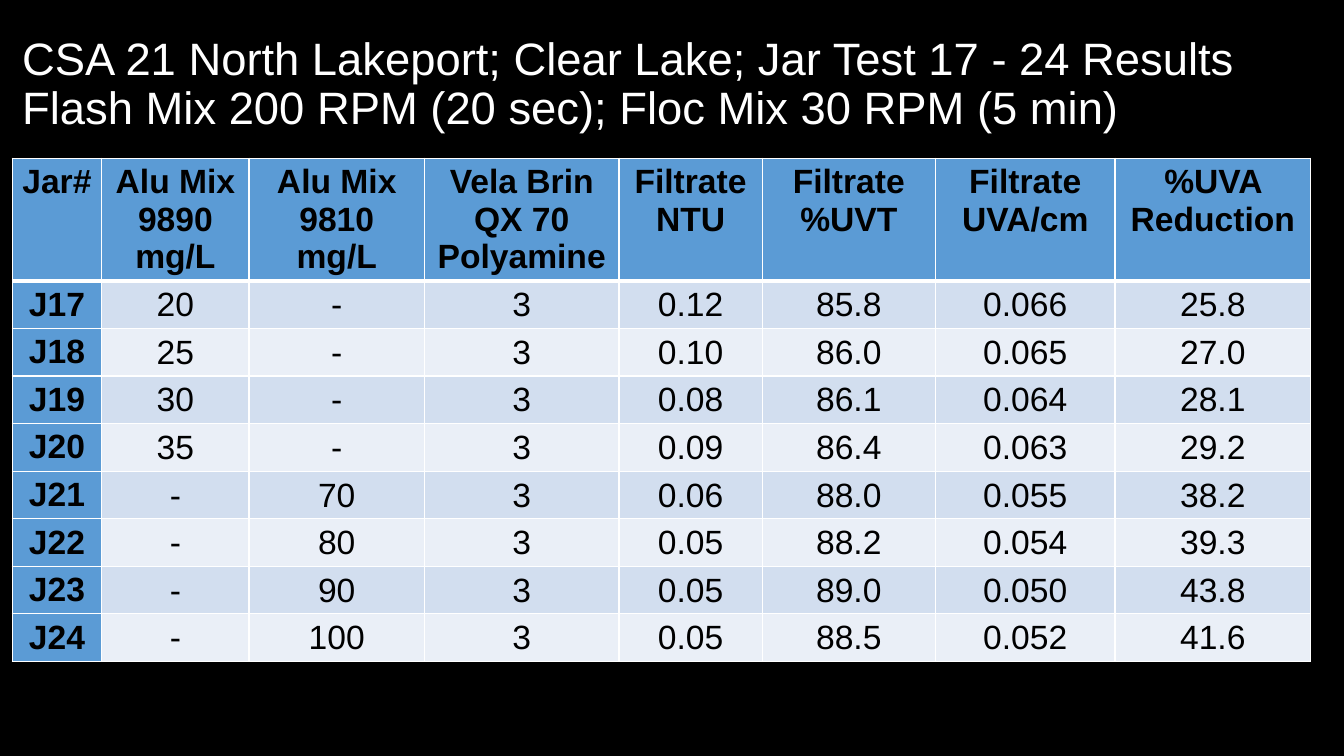
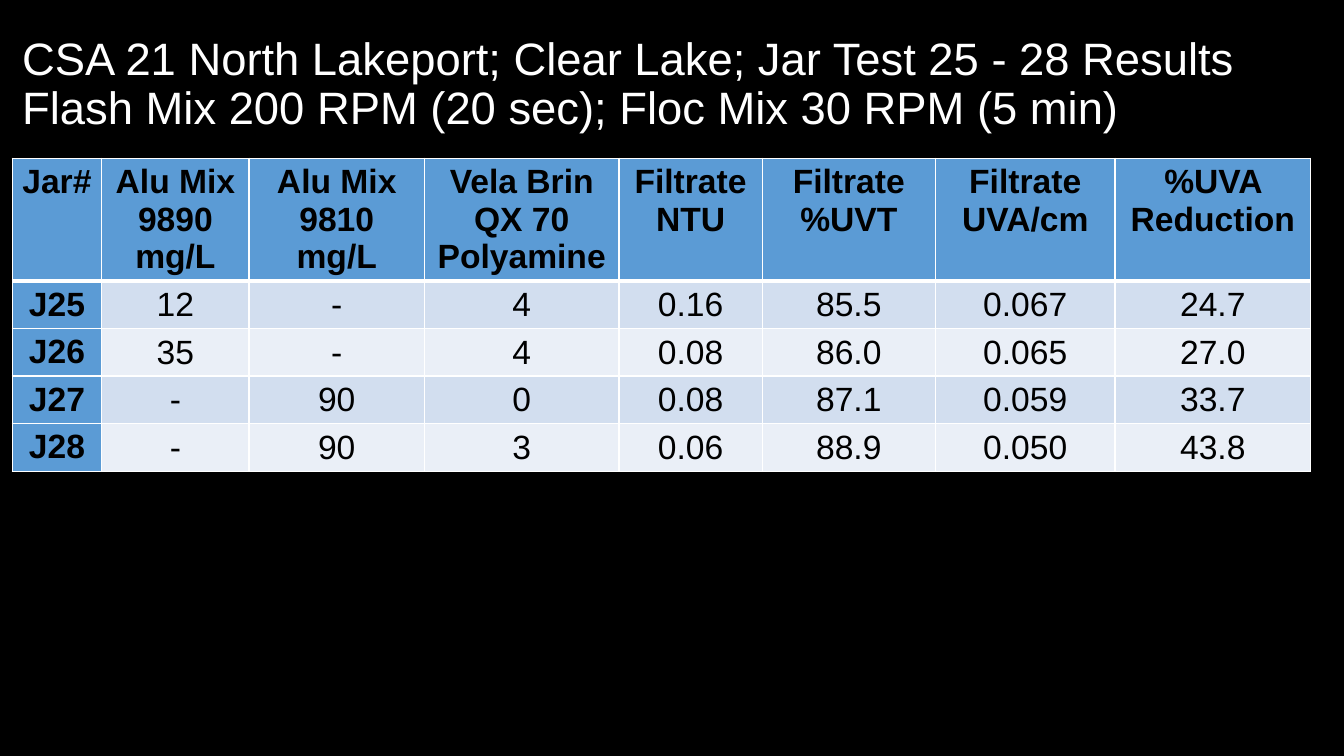
"""Jar test result slides: a two-line title above a banded results table."""
from dataclasses import dataclass
from typing import NamedTuple

from lxml.etree import SubElement
from pptx import Presentation
from pptx.dml.color import RGBColor
from pptx.enum.text import MSO_ANCHOR, MSO_AUTO_SIZE, PP_ALIGN
from pptx.oxml.ns import qn
from pptx.util import Inches, Pt


@dataclass(frozen=True)
class Theme:
    """Colours, type sizes, line widths and measures shared by the slides."""
    back: str = "000000"
    title: str = "FFFFFF"
    text: str = "000000"
    head: str = "5B9BD5"
    bands: tuple[str, str] = ("D2DEEF", "EAEFF7")
    rule: str = "FFFFFF"
    font: str = "Arial"
    title_pt: float = 32.4
    cell_pt: float = 24
    thin_pt: float = 1
    thick_pt: float = 3
    slide_w: float = 13.33
    slide_h: float = 7.5
    left: float = 0.12
    title_top: float = 0.13
    title_w: float = 13.03
    table_top: float = 1.57
    head_h: float = 1.21
    row_h: float = 0.47
    inset: float = 0.01


class Column(NamedTuple):
    """A table column: its width and the paragraphs of its heading."""
    width: float
    heading: tuple[str, ...]


class Jar(NamedTuple):
    """Doses and measured results of one jar."""
    number: int
    dose_9890: str
    dose_9810: str
    polyamine: str
    ntu: str
    uvt: str
    uva: str
    reduction: str


T = Theme()
COLUMNS = (
    Column(0.89, ("Jar#",)),
    Column(1.46, ("Alu Mix", "9890", "mg/L")),
    Column(1.74, ("Alu Mix", "9810", "mg/L")),
    Column(1.93, ("Vela Brin QX 70", "Polyamine")),
    Column(1.42, ("Filtrate", "NTU")),
    Column(1.72, ("Filtrate", "%UVT")),
    Column(1.78, ("Filtrate", "UVA/cm")),
    Column(1.94, ("%UVA Reduction",)),
)
JAR_TESTS = (
    (
        Jar(17, "20", "-", "3", "0.12", "85.8", "0.066", "25.8"),
        Jar(18, "25", "-", "3", "0.10", "86.0", "0.065", "27.0"),
        Jar(19, "30", "-", "3", "0.08", "86.1", "0.064", "28.1"),
        Jar(20, "35", "-", "3", "0.09", "86.4", "0.063", "29.2"),
        Jar(21, "-", "70", "3", "0.06", "88.0", "0.055", "38.2"),
        Jar(22, "-", "80", "3", "0.05", "88.2", "0.054", "39.3"),
        Jar(23, "-", "90", "3", "0.05", "89.0", "0.050", "43.8"),
        Jar(24, "-", "100", "3", "0.05", "88.5", "0.052", "41.6"),
    ),
    (
        Jar(25, "12", "-", "4", "0.16", "85.5", "0.067", "24.7"),
        Jar(26, "35", "-", "4", "0.08", "86.0", "0.065", "27.0"),
        Jar(27, "-", "90", "0", "0.08", "87.1", "0.059", "33.7"),
        Jar(28, "-", "90", "3", "0.06", "88.9", "0.050", "43.8"),
    ),
)


def add_run(p, text: str, size: float, color: str, bold: bool = False) -> None:
    """Add one formatted run to a paragraph."""
    r = p.add_run()
    r.text = text
    r.font.name = T.font
    r.font.size = Pt(size)
    r.font.bold = bold
    r.font.color.rgb = RGBColor.from_string(color)


def add_title(s, jars: tuple[Jar, ...]) -> None:
    """Place and fill the title of a slide."""
    sp = s.shapes.title
    sp.left, sp.top = Inches(T.left), Inches(T.title_top)
    sp.width, sp.height = Inches(T.title_w), Inches(T.table_top - T.title_top)
    tf = sp.text_frame
    tf.word_wrap = True
    tf.auto_size = MSO_AUTO_SIZE.NONE
    tf.vertical_anchor = MSO_ANCHOR.MIDDLE
    p = tf.paragraphs[0]
    p.alignment = PP_ALIGN.LEFT
    p.line_spacing = 0.9
    span = f"{jars[0].number} - {jars[-1].number}"
    add_run(p, f"CSA 21 North Lakeport; Clear Lake; Jar Test {span} Results",
            T.title_pt, T.title)
    p.add_line_break()
    add_run(p, "Flash Mix 200 RPM (20 sec); Floc Mix 30 RPM (5 min)",
            T.title_pt, T.title)


def set_borders(cell, top: float, bottom: float) -> None:
    """Rule the four sides of a cell, with given top and bottom widths."""
    tcPr = cell._tc.get_or_add_tcPr()
    sides = {"L": T.thin_pt, "R": T.thin_pt, "T": top, "B": bottom}
    for side, width in sides.items():
        ln = SubElement(tcPr, qn(f"a:ln{side}"), w=str(Pt(width)))
        fill = SubElement(ln, qn("a:solidFill"))
        SubElement(fill, qn("a:srgbClr"), val=T.rule)


def fill_cell(cell, lines: tuple[str, ...], row: int, col: int) -> None:
    """Write and style one cell according to its place in the table."""
    is_label = row == 0 or col == 0
    set_borders(cell, T.thick_pt if row == 1 else T.thin_pt,
                T.thick_pt if row == 0 else T.thin_pt)
    cell.fill.solid()
    color = T.head if is_label else T.bands[(row - 1) % 2]
    cell.fill.fore_color.rgb = RGBColor.from_string(color)
    if not is_label:
        cell.vertical_anchor = MSO_ANCHOR.MIDDLE
        cell.margin_left = cell.margin_right = cell.margin_top = Inches(T.inset)
        cell.margin_bottom = 0
    tf = cell.text_frame
    for i, line in enumerate(lines):
        p = tf.add_paragraph() if i else tf.paragraphs[0]
        p.alignment = PP_ALIGN.CENTER
        add_run(p, line, T.cell_pt, T.text, is_label)


def add_results(s, jars: tuple[Jar, ...]) -> None:
    """Add the results table with one row per jar."""
    rows = [tuple(c.heading for c in COLUMNS)]
    rows += [((f"J{jar.number}",), *((v,) for v in jar[1:])) for jar in jars]
    width = sum(c.width for c in COLUMNS)
    height = T.head_h + T.row_h * len(jars)
    table = s.shapes.add_table(
        len(rows), len(COLUMNS), Inches(T.left), Inches(T.table_top),
        Inches(width), Inches(height)).table
    table.first_col = True
    table.horz_banding = False
    for column, c in zip(table.columns, COLUMNS):
        column.width = Inches(c.width)
    for i, row in enumerate(rows):
        table.rows[i].height = Inches(T.row_h if i else T.head_h)
        for j, lines in enumerate(row):
            fill_cell(table.cell(i, j), lines, i, j)


def main() -> None:
    """Build and save the presentation."""
    prs = Presentation()
    prs.slide_width, prs.slide_height = Inches(T.slide_w), Inches(T.slide_h)
    back = prs.slide_master.background.fill
    back.solid()
    back.fore_color.rgb = RGBColor.from_string(T.back)
    layout = prs.slide_layouts.get_by_name("Title Only")
    for jars in JAR_TESTS:
        s = prs.slides.add_slide(layout)
        add_title(s, jars)
        add_results(s, jars)
    prs.save("out.pptx")


if __name__ == "__main__":
    main()
